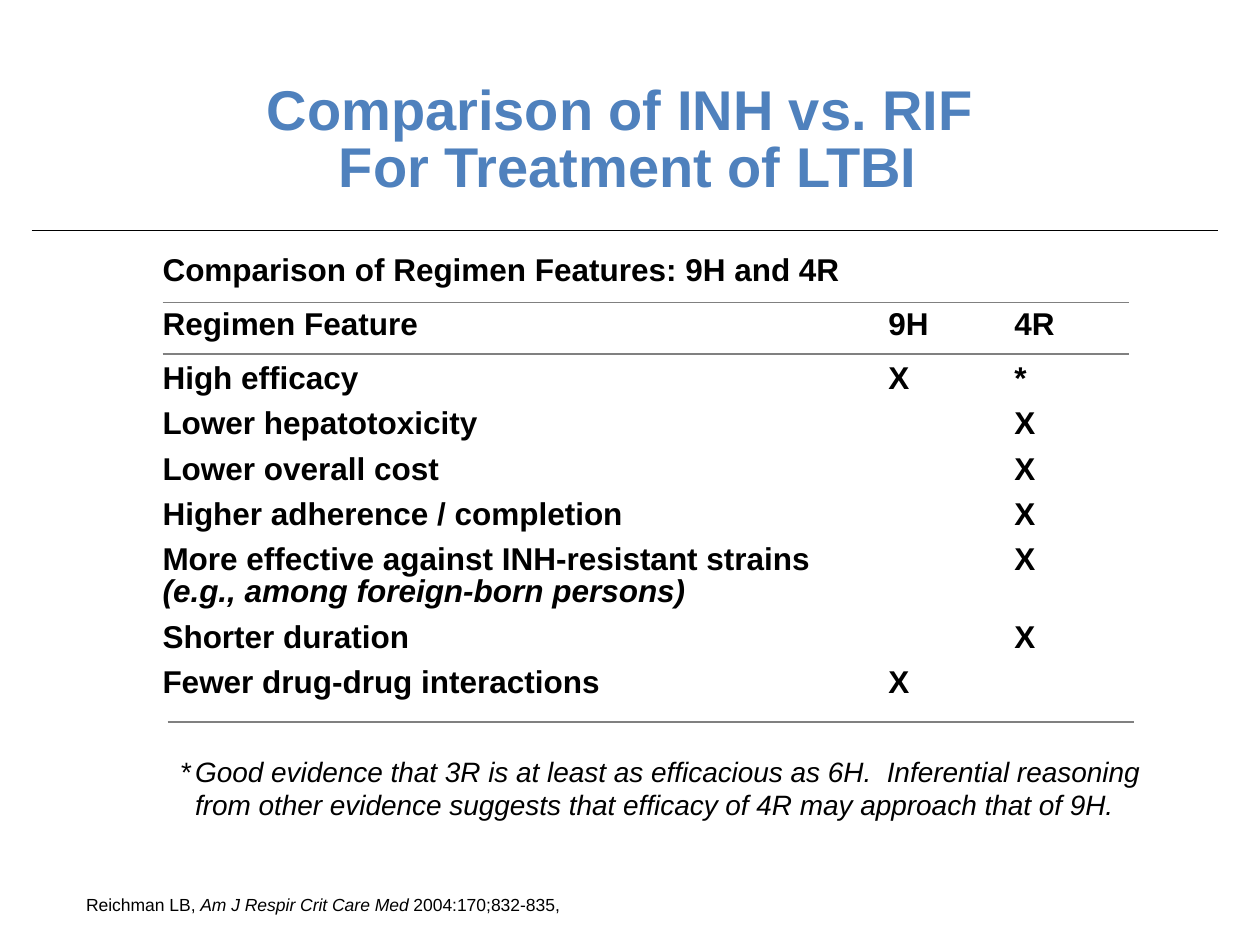
from dataclasses import dataclass

from lxml.etree import SubElement
from pptx import Presentation
from pptx.dml.color import RGBColor
from pptx.enum.shapes import MSO_CONNECTOR
from pptx.enum.text import MSO_ANCHOR, MSO_AUTO_SIZE, PP_ALIGN
from pptx.oxml.ns import qn
from pptx.util import Inches, Pt

BLUE = RGBColor(0x4F, 0x81, 0xBD)
BLACK = RGBColor(0, 0, 0)
GRAY = RGBColor(0x80, 0x80, 0x80)
FONT = "Arial"
LINE_SPACING = 0.85
COLUMN_STOPS = (5.76, 6.76)


@dataclass
class Row:
    text: str
    space_before: float = 7.5
    italic: bool = False


@dataclass
class Rule:
    left: float
    top: float
    width: float
    color: RGBColor = GRAY
    weight: float = 0.75


ROWS = [
    Row("Comparison of Regimen Features: 9H and 4R", 0),
    Row("Regimen Feature\t9H\t4R", 12.5),
    Row("High efficacy\tX\t*", 12.5),
    Row("Lower hepatotoxicity\t\tX"),
    Row("Lower overall cost\t\tX"),
    Row("Higher adherence / completion\t\tX"),
    Row("More effective against INH-resistant strains\t\tX"),
    Row("(e.g., among foreign-born persons)", 0, italic=True),
    Row("Shorter duration\t\tX"),
    Row("Fewer drug-drug interactions\tX"),
]
RULES = [
    Rule(0.25, 1.83, 9.42, BLACK, 1),
    Rule(1.29, 2.4, 7.67),
    Rule(1.29, 2.81, 7.67),
    Rule(1.33, 5.73, 7.67),
]


def format_span(span, size: float, color=BLACK, bold=False, italic=False) -> None:
    font = span.font
    font.name, font.size, font.bold, font.italic = FONT, Pt(size), bold, italic
    font.color.rgb = color


def set_tab_stops(para, stops) -> None:
    tab_list = SubElement(para._p.get_or_add_pPr(), qn("a:tabLst"))
    for stop in stops:
        SubElement(tab_list, qn("a:tab"), pos=str(Inches(stop)), algn="l")


def clear_margins(frame) -> None:
    frame.margin_left = frame.margin_right = 0
    frame.margin_top = frame.margin_bottom = 0


def add_text_frame(page, left: float, top: float, width: float, height: float):
    box = page.shapes.add_textbox(
        Inches(left), Inches(top), Inches(width), Inches(height))
    box.text_frame.word_wrap = True
    return box.text_frame


def add_title(page) -> None:
    title = page.shapes.title
    title.left, title.top = Inches(0.33), Inches(0.73)
    title.width, title.height = Inches(9.31), Inches(0.85)
    frame = title.text_frame
    frame.text = "Comparison of INH vs. RIF \nFor Treatment of LTBI"
    frame.auto_size = MSO_AUTO_SIZE.NONE
    frame.vertical_anchor = MSO_ANCHOR.BOTTOM
    clear_margins(frame)
    for para in frame.paragraphs:
        para.alignment = PP_ALIGN.CENTER
        para.line_spacing = LINE_SPACING
        format_span(para.runs[0], 32, BLUE, bold=True)


def add_comparison(page, rows: list[Row]) -> None:
    frame = add_text_frame(page, 1.29, 2.03, 7.88, 3.8)
    clear_margins(frame)
    frame.text = "\n".join(row.text for row in rows)
    for para, row in zip(frame.paragraphs, rows):
        para.line_spacing = LINE_SPACING
        para.space_before = Pt(row.space_before)
        set_tab_stops(para, COLUMN_STOPS)
        for span in para.runs:
            format_span(span, 18, bold=True, italic=row.italic)


def add_citation(page) -> None:
    frame = add_text_frame(page, 0.58, 7.04, 4, 0.27)
    frame.word_wrap = False
    frame.auto_size = MSO_AUTO_SIZE.SHAPE_TO_FIT_TEXT
    frame.vertical_anchor = MSO_ANCHOR.BOTTOM
    para = frame.paragraphs[0]
    para.alignment = PP_ALIGN.RIGHT
    for text, italic in (("Reichman LB, ", False),
                         ("Am J Respir Crit Care Med ", True),
                         ("2004:170;832-835, ", False)):
        span = para.add_run()
        span.text = text
        format_span(span, 10, italic=italic)


def add_footnote(page) -> None:
    """Add the starred note with a hanging indent."""
    frame = add_text_frame(page, 1.33, 5.67, 7.92, 0.9)
    frame.auto_size = MSO_AUTO_SIZE.SHAPE_TO_FIT_TEXT
    frame.vertical_anchor = MSO_ANCHOR.BOTTOM
    frame.text = ("*\tGood evidence that 3R is at least as efficacious as 6H.  "
                  "Inferential reasoning from other evidence suggests that "
                  "efficacy of 4R may approach that of 9H.")
    para = frame.paragraphs[0]
    indent = 0.12
    properties = para._p.get_or_add_pPr()
    properties.set("marL", str(Inches(indent)))
    properties.set("indent", str(-Inches(indent)))
    set_tab_stops(para, [indent])
    for span in para.runs:
        format_span(span, 16, italic=True)


def add_rule(page, rule: Rule) -> None:
    line = page.shapes.add_connector(
        MSO_CONNECTOR.STRAIGHT, Inches(rule.left), Inches(rule.top),
        Inches(rule.left + rule.width), Inches(rule.top))
    line.line.color.rgb = rule.color
    line.line.width = Pt(rule.weight)
    SubElement(line._element.spPr, qn("a:effectLst"))


def main() -> None:
    deck = Presentation()
    deck.slide_width, deck.slide_height = Inches(10), Inches(7.5)
    page = deck.slides.add_slide(deck.slide_layouts.get_by_name("Title Only"))
    add_title(page)
    add_comparison(page, ROWS)
    add_citation(page)
    add_footnote(page)
    for rule in RULES:
        add_rule(page, rule)
    deck.save("out.pptx")


if __name__ == "__main__":
    main()
